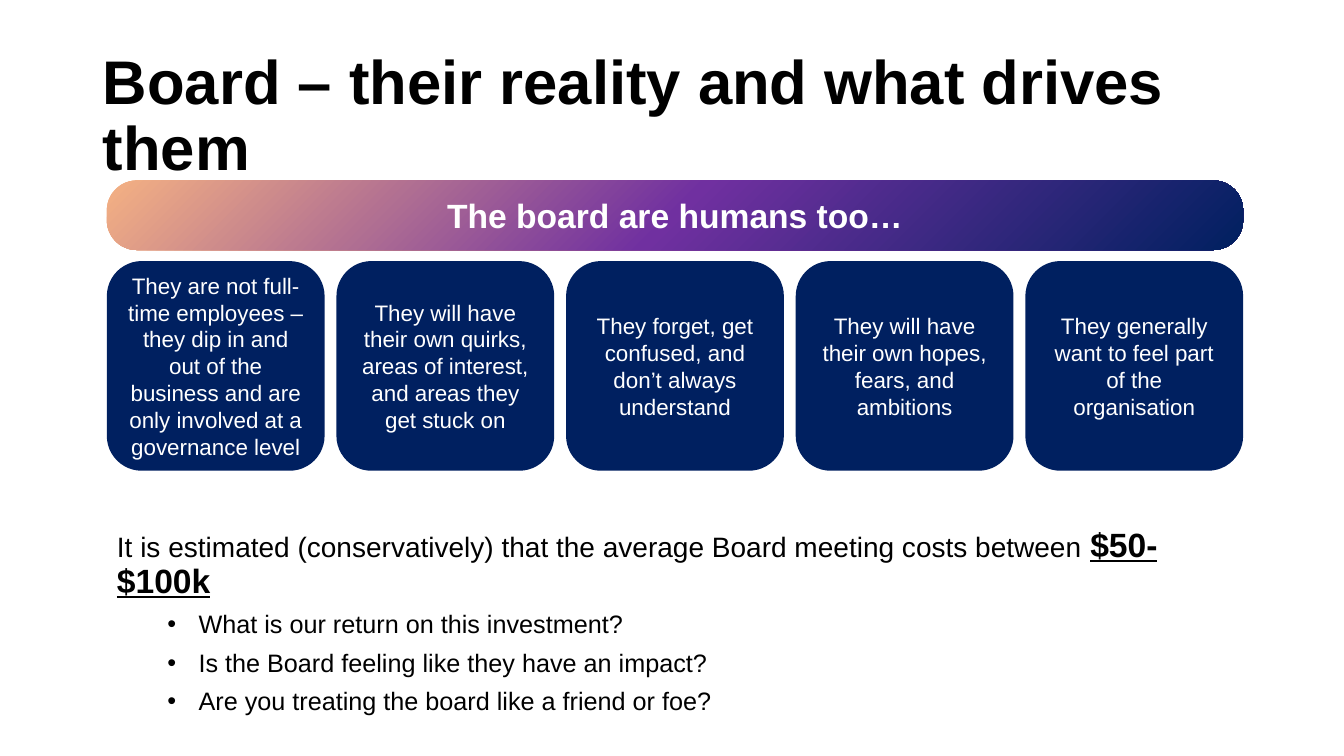
import copy

import pptx
import pptx.dml.color
import pptx.enum.dml
import pptx.enum.shapes
import pptx.enum.text
import pptx.oxml
import pptx.oxml.ns
import pptx.util
from pptx.util import Inches, Pt

RGBColor = pptx.dml.color.RGBColor
ALIGN = pptx.enum.text.PP_ALIGN
ANCHOR = pptx.enum.text.MSO_ANCHOR

BLACK = RGBColor(0, 0, 0)
WHITE = RGBColor(255, 255, 255)
NAVY = RGBColor(0x00, 0x20, 0x60)
PURPLE = RGBColor(0x70, 0x30, 0xA0)
PEACH = RGBColor(0xF4, 0xB1, 0x83)

LEFT, WIDTH = 1.06, 11.27
CARD_WIDTH = 2.16
CARDS = [
    "They are not full-time employees – they dip in and out of the business "
    "and are only involved at a governance level",
    "They will have their own quirks, areas of interest, and areas they get stuck on",
    "They forget, get confused, and don’t always understand",
    "They will have their own hopes, fears, and ambitions",
    "They generally want to feel part of the organisation",
]
QUESTIONS = [
    "What is our return on this investment?",
    "Is the Board feeling like they have an impact?",
    "Are you treating the board like a friend or foe?",
]


class BoardSlide:
    font_name = "Arial"

    def __init__(self, page):
        self.page = page

    def style(self, para, size, color, bold=False, align=ALIGN.LEFT):
        para.alignment = align
        font = para.font
        font.name, font.size, font.bold = self.font_name, Pt(size), bold
        font.color.rgb = color

    def place(self, box, left, top, width, height, anchor):
        box.left, box.top = Inches(left), Inches(top)
        box.width, box.height = Inches(width), Inches(height)
        frame = box.text_frame
        frame.word_wrap = True
        frame.auto_size = pptx.enum.text.MSO_AUTO_SIZE.NONE
        frame.vertical_anchor = anchor
        return frame

    def title(self, text):
        frame = self.place(self.page.shapes.title, 0.92, 0.44, 11.5, 1.45, ANCHOR.MIDDLE)
        frame.text = text
        para = frame.paragraphs[0]
        para.line_spacing = 0.9
        self.style(para, 44, BLACK, bold=True)

    def panel(self, text, left, top, width, height, size, bold=False):
        box = self.page.shapes.add_shape(
            pptx.enum.shapes.MSO_SHAPE.ROUNDED_RECTANGLE,
            Inches(left), Inches(top), Inches(width), Inches(height))
        box.shadow.inherit = False
        box.fill.solid()
        box.fill.fore_color.rgb = NAVY
        box.line.fill.background()
        frame = box.text_frame
        frame.word_wrap = True
        frame.vertical_anchor = ANCHOR.MIDDLE
        frame.text = text
        self.style(frame.paragraphs[0], size, WHITE, bold, ALIGN.CENTER)
        return box

    def banner(self, text):
        box = self.panel(text, LEFT, 1.79, WIDTH, 0.69, 24, bold=True)
        box.adjustments[0] = 0.43
        box.fill.gradient()
        box.fill.gradient_angle = 315
        stop_list = box._element.spPr.find(".//" + pptx.oxml.ns.qn("a:gsLst"))
        stop_list.insert(1, copy.deepcopy(stop_list[0]))
        for stop, color, position in zip(
                box.fill.gradient_stops, (PEACH, PURPLE, NAVY), (0, 0.5, 1)):
            stop.color.rgb = color
            stop.position = position

    def cards(self, texts):
        pitch = (WIDTH - CARD_WIDTH) / (len(texts) - 1)
        for index, text in enumerate(texts):
            self.panel(text, LEFT + index * pitch, 2.59, CARD_WIDTH, 2.08, 16)

    def indent(self, para, margin, hanging, bullet=None):
        properties = para._p.get_or_add_pPr()
        properties.set("marL", str(Inches(margin)))
        properties.set("indent", str(Inches(hanging)))
        tag = "a:buChar" if bullet else "a:buNone"
        mark = pptx.oxml.parse_xml(f"<{tag} {pptx.oxml.ns.nsdecls('a')}/>")
        if bullet:
            mark.set("char", bullet)
        properties.insert_element_before(mark, "a:tabLst", "a:defRPr", "a:extLst")

    def spacing(self, para, before):
        para.line_spacing = 0.9
        para.space_before, para.space_after = Pt(before), Pt(3)

    def body(self, lead, amount, questions):
        frame = self.place(self.page.placeholders[1], LEFT, 5.19, WIDTH, 1.74, ANCHOR.TOP)
        para = frame.paragraphs[0]
        self.spacing(para, 10)
        self.indent(para, 0, 0)
        self.style(para, 20, BLACK)
        para.add_run().text = lead
        span = para.add_run()
        span.text = amount
        span.font.size, span.font.bold, span.font.underline = Pt(24), True, True
        for question in questions:
            para = frame.add_paragraph()
            para.text = question
            para.level = 1
            self.spacing(para, 5)
            self.indent(para, 0.81, -0.31, "•")
            self.style(para, 18, BLACK)


def main():
    deck = pptx.Presentation()
    deck.slide_width, deck.slide_height = Inches(13.33), Inches(7.5)
    slide = BoardSlide(deck.slides.add_slide(deck.slide_layouts[1]))
    slide.title("Board – their reality and what drives them")
    slide.body(
        "It is estimated (conservatively) that the average Board meeting costs between ",
        "$50-$100k", QUESTIONS)
    slide.banner("The board are humans too…")
    slide.cards(CARDS)
    deck.save("out.pptx")


if __name__ == "__main__":
    main()
